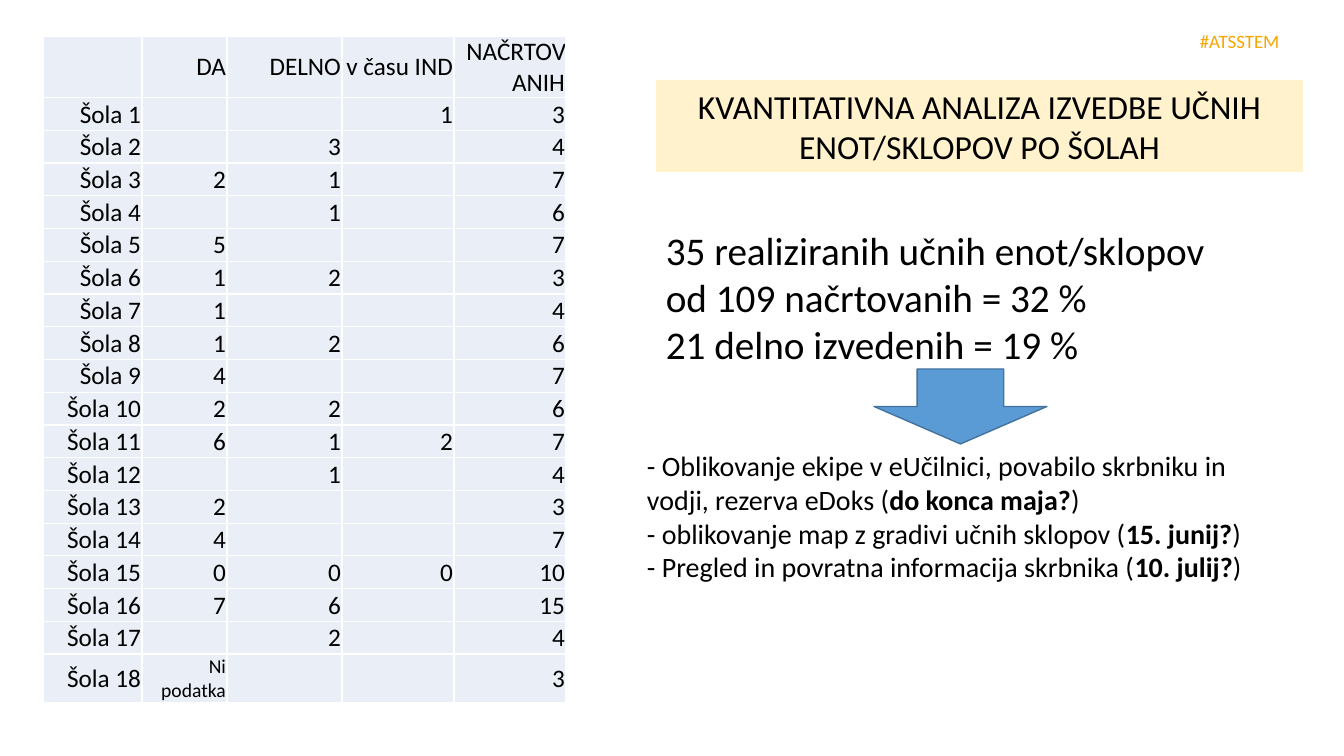
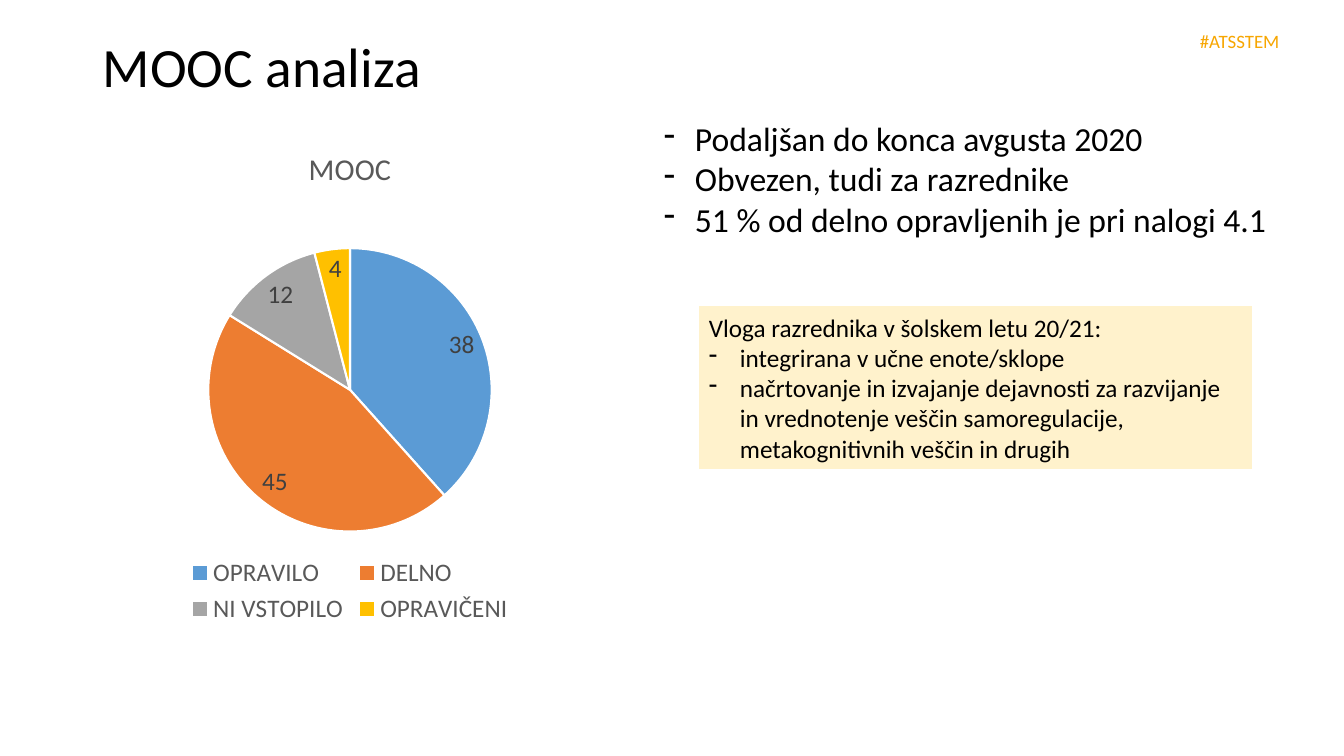
from lxml.etree import SubElement
from pptx import Presentation
from pptx.chart.data import CategoryChartData
from pptx.dml.color import RGBColor
from pptx.enum.chart import XL_CHART_TYPE, XL_LABEL_POSITION, XL_LEGEND_POSITION
from pptx.enum.shapes import MSO_SHAPE
from pptx.enum.text import MSO_ANCHOR, PP_ALIGN
from pptx.oxml import parse_xml
from pptx.oxml.ns import nsdecls, qn
from pptx.util import Emu, Pt

PX_PER_INCH = 100.8
FONT = "Calibri"
BLACK, WHITE = "000000", "FFFFFF"
ORANGE_TAG, CREAM, PALE_BLUE = "F7A601", "FFF2CC", "EAEFF7"
ARROW_FILL, ARROW_LINE = "5B9BD5", "43739E"
CHART_GREY, LABEL_GREY = "595959", "404040"
BULLET_INDENT = 31

TABLE_HEADER = ["", "DA", "DELNO", "v času IND", "NAČRTOVANIH"]
SCHOOL_COUNTS = [
    ("", "", "1", "3"),
    ("", "3", "", "4"),
    ("2", "1", "", "7"),
    ("", "1", "", "6"),
    ("5", "", "", "7"),
    ("1", "2", "", "3"),
    ("1", "", "", "4"),
    ("1", "2", "", "6"),
    ("4", "", "", "7"),
    ("2", "2", "", "6"),
    ("6", "1", "2", "7"),
    ("", "1", "", "4"),
    ("2", "", "", "3"),
    ("4", "", "", "7"),
    ("0", "0", "0", "10"),
    ("7", "6", "", "15"),
    ("", "2", "", "4"),
    ("Ni podatka", "", "", "3"),
]
COLUMN_WIDTHS = [99, 85, 115, 112, 112]
HEADER_HEIGHT, LAST_ROW_HEIGHT = 61, 47

MOOC_RESULTS = [
    ("OPRAVILO", 38, "5B9BD5"),
    ("DELNO", 45, "ED7D31"),
    ("NI VSTOPILO", 12, "A5A5A5"),
    ("OPRAVIČENI", 4, "FFC000"),
]


def px(length):
    return Emu(round(length * 914400 / PX_PER_INCH))


def rgb(hex_color):
    return RGBColor.from_string(hex_color)


def style_font(font, size, color=BLACK):
    font.name = FONT
    font.size = Pt(size)
    font.color.rgb = rgb(color)


def add_dash(paragraph):
    """Give the paragraph a hanging dash bullet."""
    properties = paragraph._p.get_or_add_pPr()
    properties.set("marL", str(px(BULLET_INDENT)))
    properties.set("indent", str(-px(BULLET_INDENT)))
    SubElement(properties, qn("a:buChar")).set("char", "-")


def write_lines(frame, lines, size, color=BLACK, align=PP_ALIGN.LEFT):
    """Write one paragraph per line; a tuple alternates plain and bold runs."""
    frame.word_wrap = True
    for index, line in enumerate(lines):
        paragraph = frame.paragraphs[0] if index == 0 else frame.add_paragraph()
        paragraph.alignment = align
        parts = line if isinstance(line, tuple) else (line,)
        for position, part in enumerate(parts):
            run = paragraph.add_run()
            run.text = part
            style_font(run.font, size, color)
            run.font.bold = position % 2 == 1


def add_text(slide, box, lines, size, color=BLACK):
    frame = slide.shapes.add_textbox(*map(px, box)).text_frame
    write_lines(frame, lines, size, color)
    return frame


def add_filled_shape(slide, box, kind, fill, line=None):
    shape = slide.shapes.add_shape(kind, *map(px, box))
    shape.shadow.inherit = False
    shape.fill.solid()
    shape.fill.fore_color.rgb = rgb(fill)
    if line:
        shape.line.color.rgb = rgb(line)
        shape.line.width = Pt(1)
    else:
        shape.line.fill.background()
    return shape


def add_cream_panel(slide, box, lines, size, align=PP_ALIGN.LEFT):
    panel = add_filled_shape(slide, box, MSO_SHAPE.RECTANGLE, CREAM)
    write_lines(panel.text_frame, lines, size, align=align)
    return panel.text_frame


def add_tagged_slide(deck):
    """Add a blank slide with the project tag in its corner."""
    slide = deck.slides.add_slide(deck.slide_layouts[6])
    tag = add_text(slide, (1190, 25, 100, 33), ["#ATSSTEM"], 13.5, ORANGE_TAG)
    tag.word_wrap = False
    return slide


def style_cell(cell, text):
    cell.margin_left = cell.margin_right = cell.margin_top = px(1)
    cell.margin_bottom = 0
    cell.vertical_anchor = MSO_ANCHOR.MIDDLE
    cell.fill.solid()
    cell.fill.fore_color.rgb = rgb(PALE_BLUE)
    for index, side in enumerate(("lnL", "lnR", "lnT", "lnB")):
        border = parse_xml(
            f'<a:{side} {nsdecls("a")} w="12700"><a:solidFill>'
            f'<a:srgbClr val="{WHITE}"/></a:solidFill></a:{side}>'
        )
        cell._tc.get_or_add_tcPr().insert(index, border)
    if text:
        size = 14 if text == "Ni podatka" else 18
        write_lines(cell.text_frame, [text], size, align=PP_ALIGN.RIGHT)


def add_school_table(slide, box):
    rows = [TABLE_HEADER]
    rows += [(f"Šola {n}", *counts) for n, counts in enumerate(SCHOOL_COUNTS, 1)]
    table = slide.shapes.add_table(
        len(rows), len(COLUMN_WIDTHS), *map(px, box)
    ).table
    table.first_row = table.horz_banding = False
    for column, width in zip(table.columns, COLUMN_WIDTHS):
        column.width = px(width)
    body_height = box[3] - HEADER_HEIGHT - LAST_ROW_HEIGHT
    body_rows = len(rows) - 2
    heights = [HEADER_HEIGHT, *[body_height / body_rows] * body_rows, LAST_ROW_HEIGHT]
    for row, height, texts in zip(table.rows, heights, rows):
        row.height = px(height)
        for cell, text in zip(row.cells, texts):
            style_cell(cell, text)


def add_mooc_pie(slide, box):
    names, values, colors = zip(*MOOC_RESULTS)
    data = CategoryChartData()
    data.categories = names
    data.add_series("MOOC", values)
    chart = slide.shapes.add_chart(XL_CHART_TYPE.PIE, *map(px, box), data).chart
    style_font(chart.font, 18)

    chart.has_title = True
    title = chart.chart_title.text_frame.paragraphs[0]
    title.text = "MOOC"
    style_font(title.runs[0].font, 21.6, CHART_GREY)
    title.runs[0].font.bold = False

    chart.has_legend = True
    chart.legend.position = XL_LEGEND_POSITION.BOTTOM
    chart.legend.include_in_layout = False
    style_font(chart.legend.font, 18, CHART_GREY)

    plot = chart.plots[0]
    plot.vary_by_categories = True
    plot.has_data_labels = True
    labels = plot.data_labels
    labels.show_value = True
    labels.show_percentage = False
    labels.position = XL_LABEL_POSITION.BEST_FIT
    style_font(labels.font, 18, LABEL_GREY)
    for index, color in enumerate(colors):
        slice_format = plot.series[0].points[index].format
        slice_format.fill.solid()
        slice_format.fill.fore_color.rgb = rgb(color)
        slice_format.line.color.rgb = rgb(WHITE)
        slice_format.line.width = Pt(1.5)


def build_school_slide(deck):
    slide = add_tagged_slide(deck)
    add_school_table(slide, (43, 36, sum(COLUMN_WIDTHS), 665))
    add_text(slide, (656, 221, 589, 152), [
        "35 realiziranih učnih enot/sklopov od 109 načrtovanih = 32 %",
        "21 delno izvedenih = 19 %",
    ], 28)
    add_cream_panel(
        slide, (656, 80, 647, 92),
        ["KVANTITATIVNA ANALIZA IZVEDBE UČNIH ENOT/SKLOPOV PO ŠOLAH"],
        24, PP_ALIGN.CENTER,
    )
    add_filled_shape(
        slide, (874, 369, 173, 75), MSO_SHAPE.DOWN_ARROW, ARROW_FILL, ARROW_LINE
    )
    add_text(slide, (637, 444, 647, 146), [
        ("- Oblikovanje ekipe v eUčilnici, povabilo skrbniku in vodji, "
         "rezerva eDoks (", "do konca maja?", ")"),
        ("- oblikovanje map z gradivi učnih sklopov (", "15. junij?", ")"),
        ("- Pregled in povratna informacija skrbnika (", "10. julij?", ")"),
    ], 20)


def build_mooc_slide(deck):
    slide = add_tagged_slide(deck)
    title = add_text(slide, (93, 40, 1159, 60), ["MOOC analiza"], 39.6)
    title.vertical_anchor = MSO_ANCHOR.MIDDLE
    title.paragraphs[0].line_spacing = 0.9
    add_mooc_pie(slide, (46, 127, 608, 502))
    deadlines = add_text(slide, (654, 113, 672, 132), [
        "Podaljšan do konca avgusta 2020",
        "Obvezen, tudi za razrednike",
        "51 % od delno opravljenih je pri nalogi 4.1",
    ], 24)
    teacher_role = add_cream_panel(slide, (699, 306, 553, 163), [
        "Vloga razrednika v šolskem letu 20/21:",
        "integrirana v učne enote/sklope",
        "načrtovanje in izvajanje dejavnosti za razvijanje in vrednotenje "
        "veščin samoregulacije, metakognitivnih veščin in drugih",
    ], 18)
    for paragraph in (*deadlines.paragraphs, *teacher_role.paragraphs[1:]):
        add_dash(paragraph)


def main():
    deck = Presentation()
    deck.slide_width, deck.slide_height = px(1344), px(756)
    build_school_slide(deck)
    build_mooc_slide(deck)
    deck.save("out.pptx")


if __name__ == "__main__":
    main()
